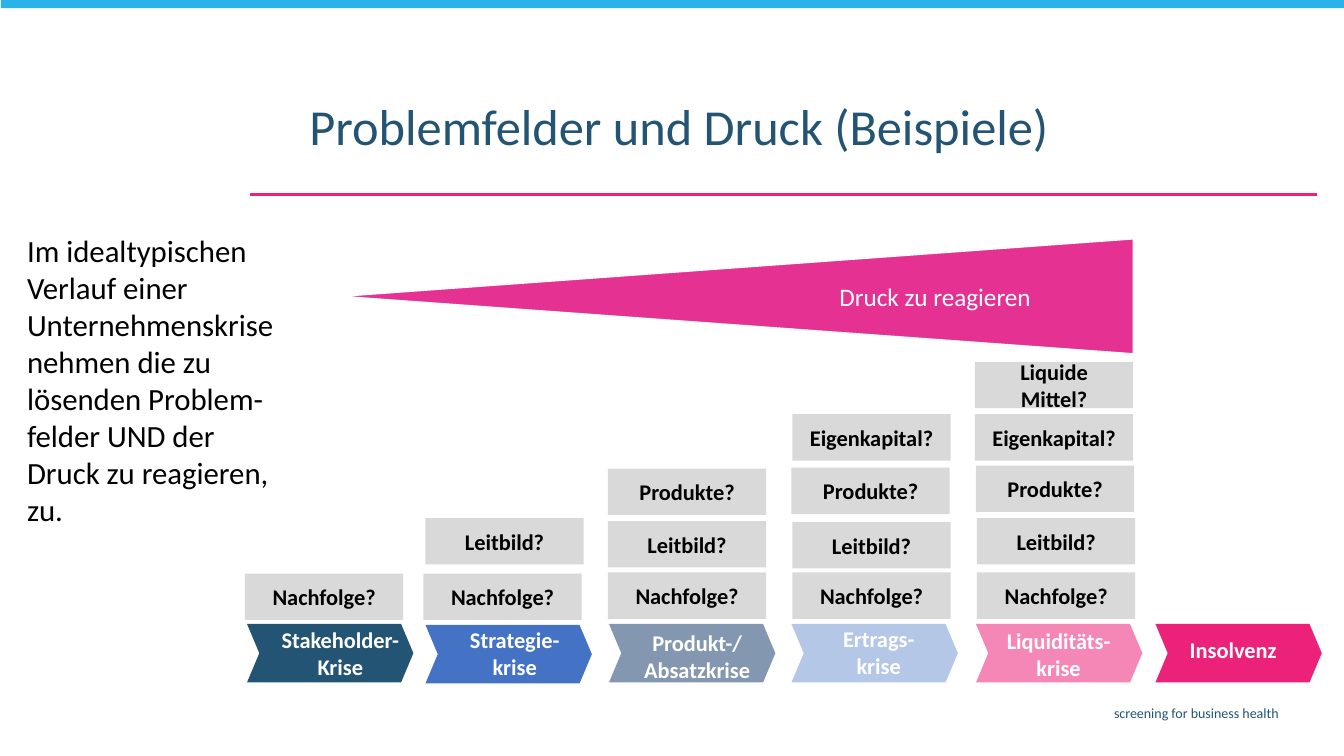
import pptx
import pptx.util
from lxml import etree
from pptx.dml.color import RGBColor
from pptx.enum.shapes import MSO_CONNECTOR, MSO_SHAPE
from pptx.enum.text import MSO_ANCHOR, PP_ALIGN
from pptx.oxml.ns import qn

PX = 9144
COLOURS = {
    "navy": "245473", "sky": "29B3E8", "pink": "EC2179", "wedge": "E53292",
    "grey": "D9D9D9", "black": "000000", "white": "FFFFFF", "blue": "4472C4",
    "slate": "8497B0", "pale": "B4C7E7", "rose": "F587B6",
}
QUESTIONS = {
    "Nachfolge?": [(243, 569), (420, 569), (603, 568), (786, 568), (969, 568)],
    "Leitbild?": [(422, 514), (603, 517), (786, 518), (969, 514)],
    "Produkte?": [(603, 465), (785, 464), (968, 462)],
    "Eigenkapital?": [(786, 411), (967, 411)],
    "Liquide Mittel?": [(967, 359)],
}
STAGES = [
    ("Stakeholder-\vKrise", "navy", (245, 619), (255, 616, 165, 64)),
    ("Strategie-krise", "blue", (422, 620), (438, 616, 145, 64)),
    ("Produkt-/ Absatzkrise", "slate", (604, 619), (609, 619, 165, 64)),
    ("Ertrags-krise", "pale", (785, 619), (822, 615, 99, 64)),
    ("Liquiditäts-krise", "rose", (968, 619), (986, 617, 128, 64)),
    ("Insolvenz", "pink", (1146, 619), (1157, 626, 132, 37)),
]


class Painter:
    """Draws styled elements on one slide, with lengths in px."""

    def __init__(self, page, font="Calibri"):
        self.page = page
        self.font = font

    def colour(self, name):
        return RGBColor.from_string(COLOURS[name])

    def scale(self, *lengths):
        return [length * PX for length in lengths]

    def label(self, shape, text, size, colour, bold=False,
              align=PP_ALIGN.CENTER, anchor=MSO_ANCHOR.MIDDLE):
        frame = shape.text_frame
        frame.word_wrap = True
        frame.vertical_anchor = anchor
        para = frame.paragraphs[0]
        para.text = text
        para.alignment = align
        para.font.name = self.font
        para.font.size = pptx.util.Pt(size)
        para.font.bold = bold
        para.font.color.rgb = self.colour(colour)
        return para

    def text(self, area, text, size, colour, **style):
        box = self.page.shapes.add_textbox(*self.scale(*area))
        return self.label(box, text, size, colour, **style)

    def shape(self, kind, area, fill, outline=None):
        shape = self.page.shapes.add_shape(kind, *self.scale(*area))
        shape.shadow.inherit = False
        shape.fill.solid()
        shape.fill.fore_color.rgb = self.colour(fill)
        if outline:
            shape.line.color.rgb = self.colour(outline)
            shape.line.width = pptx.util.Pt(1)
        else:
            shape.line.fill.background()
        return shape

    def rule(self, ends, colour, width):
        line = self.page.shapes.add_connector(MSO_CONNECTOR.STRAIGHT, *self.scale(*ends))
        line.line.color.rgb = self.colour(colour)
        line.line.width = pptx.util.Pt(width)
        etree.SubElement(line.element.spPr, qn("a:effectLst"))

    def question(self, left, top, text):
        block = self.shape(MSO_SHAPE.RECTANGLE, (left, top, 157, 46), "grey")
        self.label(block, text, 16, "black", bold=True)

    def wedge(self, area, text):
        wedge = self.shape(MSO_SHAPE.ISOSCELES_TRIANGLE, area, "wedge", "white")
        wedge.rotation = 270
        self.label(wedge, text, 18, "white")
        wedge.element.txBody.bodyPr.set("vert", "vert")

    def stage(self, text, fill, corner, text_area):
        chevron = self.shape(MSO_SHAPE.CHEVRON, (*corner, 165, 58), fill)
        chevron.adjustments[0] = 0.21
        self.text(text_area, text, 16, "white", bold=True)


def main():
    deck = pptx.Presentation()
    deck.slide_width, deck.slide_height = 1333 * PX, 750 * PX
    painter = Painter(deck.slides.add_slide(deck.slide_layouts[6]))

    painter.rule((1306, 193, 248, 193), "pink", 1.5)
    painter.shape(MSO_SHAPE.RECTANGLE, (1, 0, 1332, 8), "sky")
    painter.text((365, 694, 913, 29), "screening for business health", 10, "navy",
                 align=PP_ALIGN.RIGHT, anchor=MSO_ANCHOR.TOP)
    title = painter.text((297, 96, 968, 76), "Problemfelder und Druck (Beispiele)", 36,
                         "navy", align=PP_ALIGN.LEFT, anchor=MSO_ANCHOR.TOP)
    title.line_spacing = 0.9
    painter.text((17, 225, 276, 305),
                 "Im idealtypischen Verlauf einer Unternehmenskrise nehmen die zu "
                 "lösenden Problem-felder UND der Druck zu reagieren, zu.",
                 22, "black", align=PP_ALIGN.LEFT, anchor=MSO_ANCHOR.TOP)

    for text, corners in QUESTIONS.items():
        for left, top in corners:
            painter.question(left, top, text)
    painter.wedge((674, -99, 114, 786), "Druck zu reagieren")
    for stage in STAGES:
        painter.stage(*stage)

    deck.save("out.pptx")


if __name__ == "__main__":
    main()
